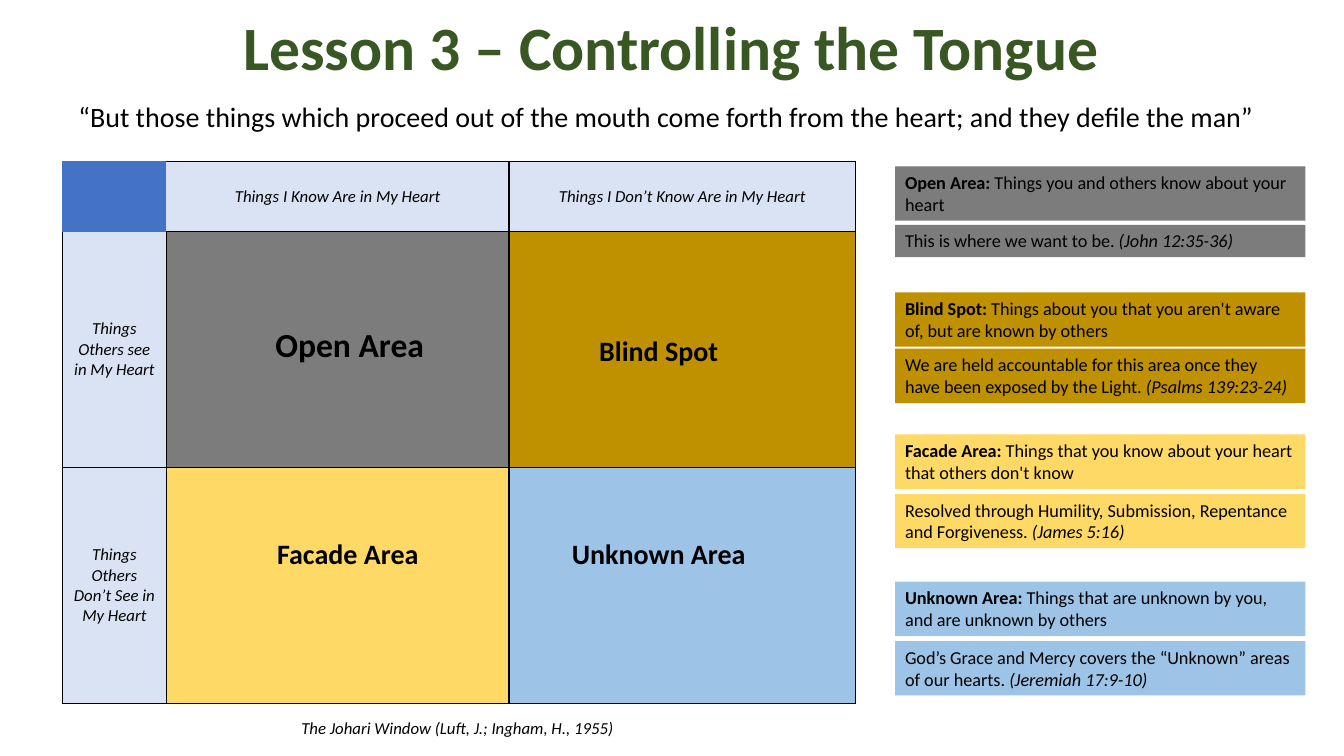
from lxml import etree
from pptx import Presentation
from pptx.dml.color import RGBColor
from pptx.enum.shapes import MSO_SHAPE
from pptx.enum.text import MSO_ANCHOR, MSO_AUTO_SIZE, PP_ALIGN
from pptx.oxml.ns import qn
from pptx.util import Inches, Pt

RECT = MSO_SHAPE.RECTANGLE
TOP, MIDDLE = MSO_ANCHOR.TOP, MSO_ANCHOR.MIDDLE
GROW = MSO_AUTO_SIZE.SHAPE_TO_FIT_TEXT
LEFT, CENTER = PP_ALIGN.LEFT, PP_ALIGN.CENTER

WIDE, HIGH = Inches(13.33), Inches(7.5)
FONT = "Calibri"
PLAIN_GRID = "{2D5ABB26-0587-4C30-8999-92F81FD0307C}"
COLORS = {
    "ink": "000000", "title": "385723", "corner": "4472C4", "head": "DAE3F3",
    "open": "7C7C7C", "blind": "BF9000", "facade": "FFD966", "unknown": "9DC3E6",
}

# Positions and sizes are percentages of the slide's width and height.
COLS = [7.73, 25.5, 25.8]
ROWS = [9.33, 31.2, 31.2]
CELLS = [
    [("corner", [], ""),
     ("head", ["Things I Know Are in My Heart"], "TRB"),
     ("head", ["Things I Don’t Know Are in My Heart"], "TRB")],
    [("head", ["Things Others see in My Heart"], "LRB"),
     ("open", [], "LRB"), ("blind", [], "LRB")],
    [("head", ["Things Others", "Don’t See in My Heart"], "LRB"),
     ("facade", [], "LRB"), ("unknown", [], "LRB")],
]
LABELS = [
    ("Open Area", 24, (18.75, 42.13, 14.55, 6.67)),
    ("Blind Spot", 20, (42.45, 43.47, 13.13, 5.87)),
    ("Facade Area", 20, (18.68, 70.27, 14.4, 5.87)),
    ("Unknown Area", 20, (40.88, 70.27, 16.28, 5.87)),
]
CARD_X, CARD_W, CARD_H = 66.6, 30.53, 7.2
# Colour, top, name, meaning, second top, second height, advice, verse
CARDS = [
    ("open", 22, "Open Area: ", "Things you and others know about your heart",
     29.73, 4.27, "This is where we want to be. ", "(John 12:35-36)"),
    ("blind", 38.67, "Blind Spot: ",
     "Things about you that you aren't aware of, but are known by others",
     46.13, CARD_H,
     "We are held accountable for this area once they have been exposed by the Light. ",
     "(Psalms 139:23-24)"),
    ("facade", 57.47, "Facade Area: ",
     "Things that you know about your heart that others don't know",
     65.33, CARD_H,
     "Resolved through Humility, Submission, Repentance and Forgiveness. ",
     "(James 5:16)"),
    ("unknown", 76.93, "Unknown Area: ",
     "Things that are unknown by you, and are unknown by others",
     84.8, CARD_H,
     "God’s Grace and Mercy covers the “Unknown” areas of our hearts. ",
     "(Jeremiah 17:9-10)"),
]


def color(name):
    return RGBColor.from_string(COLORS[name])


def place(x, y, w, h):
    """Turn percentages of the slide into lengths."""
    return (int(WIDE * x / 100), int(HIGH * y / 100),
            int(WIDE * w / 100), int(HIGH * h / 100))


def add_run(para, text, size, bold=False, italic=False, ink="ink"):
    run = para.add_run()
    run.text = text
    font = run.font
    font.name, font.size = FONT, Pt(size)
    font.bold, font.italic = bold, italic
    font.color.rgb = color(ink)


def add_title(slide, text, box):
    title = slide.shapes.title
    title.left, title.top, title.width, title.height = place(*box)
    frame = title.text_frame
    frame.word_wrap = True
    frame.auto_size = MSO_AUTO_SIZE.NONE
    frame.vertical_anchor = MIDDLE
    para = frame.paragraphs[0]
    para.alignment, para.line_spacing = CENTER, 0.9
    add_run(para, text, 44, bold=True, ink="title")


def add_text(slide, text, size, box, align=CENTER, wrap=True, **style):
    frame = slide.shapes.add_textbox(*place(*box)).text_frame
    frame.word_wrap, frame.auto_size = wrap, GROW
    para = frame.paragraphs[0]
    para.alignment = align
    add_run(para, text, size, **style)


def add_card(slide, fill, top, high, runs):
    card = slide.shapes.add_shape(RECT, *place(CARD_X, top, CARD_W, high))
    card.shadow.inherit = False
    card.fill.solid()
    card.fill.fore_color.rgb = color(fill)
    card.line.fill.background()
    frame = card.text_frame
    frame.word_wrap, frame.auto_size = True, GROW
    frame.vertical_anchor = TOP
    para = frame.paragraphs[0]
    para.alignment = LEFT
    for text, style in runs:
        add_run(para, text, 13, **style)


def add_edges(cell, sides):
    """Draw a thin line on each side named by its letter."""
    props = cell._tc.get_or_add_tcPr()
    for side in sides:
        line = etree.SubElement(props, qn(f"a:ln{side}"), w=str(Pt(1)))
        fill = etree.SubElement(line, qn("a:solidFill"))
        etree.SubElement(fill, qn("a:srgbClr"), val=COLORS["ink"])


def fill_cell(cell, fill, lines, sides):
    add_edges(cell, sides)
    cell.fill.solid()
    cell.fill.fore_color.rgb = color(fill)
    cell.vertical_anchor = MIDDLE
    frame = cell.text_frame
    for i, text in enumerate(lines):
        para = frame.add_paragraph() if i else frame.paragraphs[0]
        para.alignment = CENTER
        add_run(para, text, 12, italic=True)


def add_window(slide):
    box = place(4.65, 21.33, sum(COLS), sum(ROWS))
    table = slide.shapes.add_table(len(ROWS), len(COLS), *box).table
    table._tbl.tblPr.find(qn("a:tableStyleId")).text = PLAIN_GRID
    for col, share in zip(table.columns, COLS):
        col.width = int(WIDE * share / 100)
    for row, share, cells in zip(table.rows, ROWS, CELLS):
        row.height = int(HIGH * share / 100)
        for cell, data in zip(row.cells, cells):
            fill_cell(cell, *data)


def main():
    deck = Presentation()
    deck.slide_width, deck.slide_height = WIDE, HIGH
    slide = deck.slides.add_slide(deck.slide_layouts[5])
    add_title(slide, "Lesson 3 – Controlling the Tongue", (6.83, 0.53, 86.25, 12.4))
    add_text(slide, "“But those things which proceed out of the mouth come forth "
             "from the heart; and they defile the man”", 20, (4.65, 12.53, 89.85, 5.87))
    add_window(slide)
    for text, size, box in LABELS:
        add_text(slide, text, size, box, bold=True)
    add_text(slide, "The Johari Window (Luft, J.; Ingham, H., 1955)", 12,
             (21.68, 94.27, 25.05, 4), align=LEFT, wrap=False, italic=True)
    for fill, top, name, meaning, low, high, advice, verse in CARDS:
        add_card(slide, fill, top, CARD_H, [(name, {"bold": True}), (meaning, {})])
        add_card(slide, fill, low, high, [(advice, {}), (verse, {"italic": True})])
    deck.save("out.pptx")


if __name__ == "__main__":
    main()
